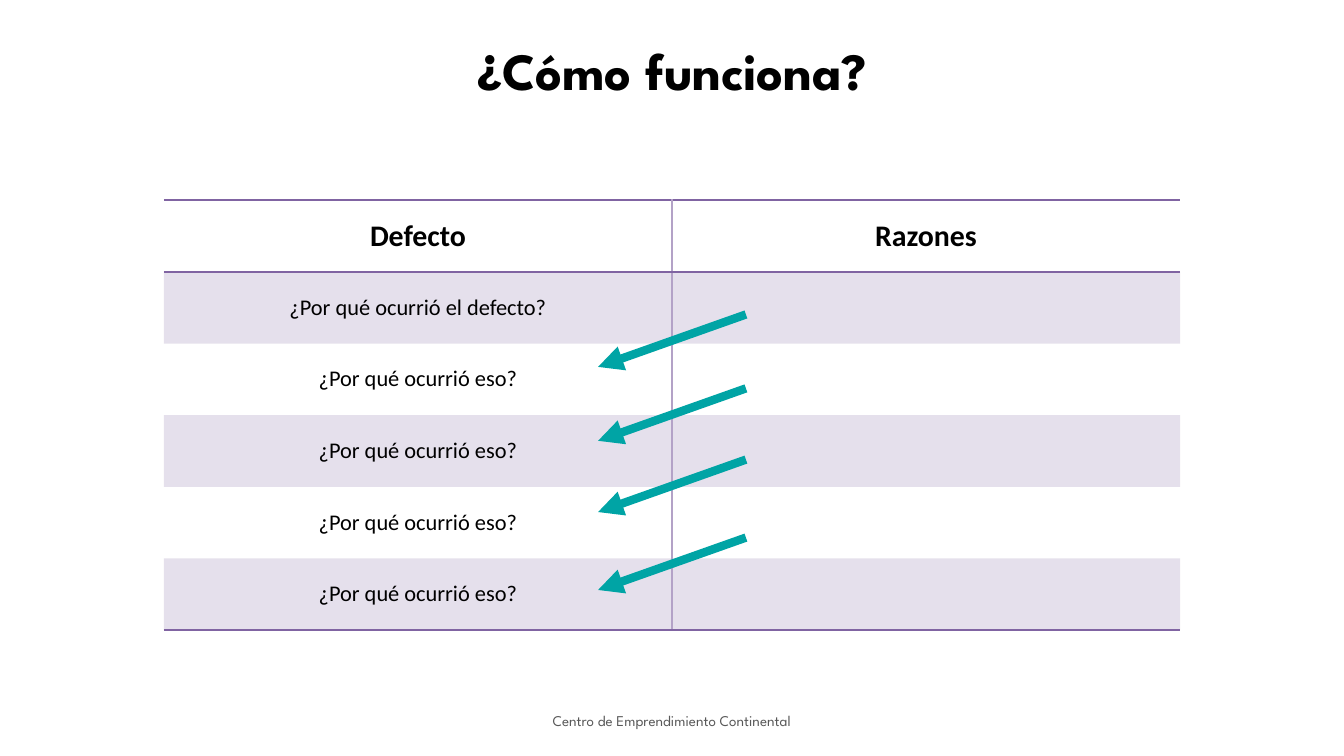
from dataclasses import dataclass

from lxml import etree
from pptx import Presentation
from pptx.dml.color import RGBColor
from pptx.enum.shapes import MSO_CONNECTOR
from pptx.enum.text import MSO_ANCHOR, PP_ALIGN
from pptx.oxml.ns import qn
from pptx.util import Inches, Pt

CENTER = PP_ALIGN.CENTER
MIDDLE = MSO_ANCHOR.MIDDLE
STRAIGHT = MSO_CONNECTOR.STRAIGHT
NO_STYLE_NO_GRID = "{2D5ABB26-0587-4C30-8999-92F81FD0307C}"


@dataclass(frozen=True)
class Theme:
    heading_font: str = "League Spartan"
    body_font: str = "Calibri"
    black: str = "000000"
    gray: str = "595959"
    purple: str = "8064A2"
    lilac: str = "B3A2C7"
    teal: str = "00A4A5"
    title_size: float = 28
    header_size: float = 16
    cell_size: float = 12
    footer_size: float = 8


THEME = Theme()
ROWS = [
    "Defecto",
    "¿Por qué ocurrió el defecto?",
    *["¿Por qué ocurrió eso?"] * 4,
]
ARROW_TOPS = [2.34, 2.89, 3.42, 4.0]


def write_text(tf, text, *, size, font=THEME.body_font, color=THEME.black,
               bold=False, line_spacing=None):
    p = tf.paragraphs[0]
    p.alignment = CENTER
    p.line_spacing = line_spacing
    r = p.add_run()
    r.text = text
    r.font.size = Pt(size)
    r.font.name = font
    r.font.bold = bold
    r.font.color.rgb = RGBColor.from_string(color)


def add_title(slide, text):
    sp = slide.shapes.title
    sp.left, sp.top = Inches(0.69), Inches(0)
    sp.width, sp.height = Inches(8.62), Inches(1.09)
    sp.text_frame.vertical_anchor = MIDDLE
    write_text(sp.text_frame, text, size=THEME.title_size,
               font=THEME.heading_font, bold=True, line_spacing=0.9)


def add_footer(slide, text):
    sp = slide.shapes.add_textbox(Inches(3.31), Inches(5.21), Inches(3.38), Inches(0.3))
    tf = sp.text_frame
    tf.word_wrap = True
    tf.vertical_anchor = MIDDLE
    write_text(tf, text, size=THEME.footer_size, font=THEME.heading_font,
               color=THEME.gray)


def fill_band(cell):
    """Tint the cell with purple at 20 % opacity."""
    cell.fill.solid()
    cell.fill.fore_color.rgb = RGBColor.from_string(THEME.purple)
    color = cell._tc.tcPr.find(f".//{qn('a:srgbClr')}")
    etree.SubElement(color, qn("a:alpha"), val="20000")


def set_borders(cell, borders):
    """Draw 1 pt borders from a dict of side (L, R, T, B) to colour."""
    tc_pr = cell._tc.get_or_add_tcPr()
    sides = [side for side in "LRTB" if side in borders]
    for i, side in enumerate(sides):
        ln = etree.Element(qn(f"a:ln{side}"), w=str(Pt(1)))
        fill = etree.SubElement(ln, qn("a:solidFill"))
        etree.SubElement(fill, qn("a:srgbClr"), val=borders[side])
        tc_pr.insert(i, ln)


def add_reasons_table(slide):
    frame = slide.shapes.add_table(len(ROWS), 2, Inches(1.22), Inches(1.49),
                                   Inches(7.56), Inches(3.2))
    table = frame.table
    table.horz_banding = False
    table._tbl.tblPr.find(qn("a:tableStyleId")).text = NO_STYLE_NO_GRID
    for i, label in enumerate(ROWS):
        header = i == 0
        for j, text in enumerate([label, "Razones" if header else ""]):
            cell = table.cell(i, j)
            cell.vertical_anchor = MIDDLE
            cell.margin_left = cell.margin_right = Inches(0.09)
            cell.margin_top = cell.margin_bottom = Inches(0.04)
            if text:
                size = THEME.header_size if header else THEME.cell_size
                write_text(cell.text_frame, text, size=size, bold=header)
            if i % 2:
                fill_band(cell)
            else:
                cell.fill.background()
            borders = {"L" if j else "R": THEME.lilac}
            if header:
                borders["T"] = THEME.purple
            if header or i == len(ROWS) - 1:
                borders["B"] = THEME.purple
            set_borders(cell, borders)


def add_arrow(slide, top):
    """Lead from a reason down to the next question."""
    line = slide.shapes.add_connector(STRAIGHT, Inches(5.55), Inches(top),
                                      Inches(4.45), Inches(top + 0.39))
    line.line.width = Pt(4.5)
    line.line.color.rgb = RGBColor.from_string(THEME.teal)
    etree.SubElement(line.line._get_or_add_ln(), qn("a:tailEnd"), type="triangle")
    etree.SubElement(line._element.spPr, qn("a:effectLst"))


def main():
    prs = Presentation()
    prs.slide_width = Inches(10)
    prs.slide_height = prs.slide_width * 9 // 16
    slide = prs.slides.add_slide(prs.slide_layouts[5])
    add_title(slide, "¿Cómo funciona?")
    add_reasons_table(slide)
    add_footer(slide, "Centro de Emprendimiento Continental")
    for top in ARROW_TOPS:
        add_arrow(slide, top)
    prs.save("out.pptx")


if __name__ == "__main__":
    main()
